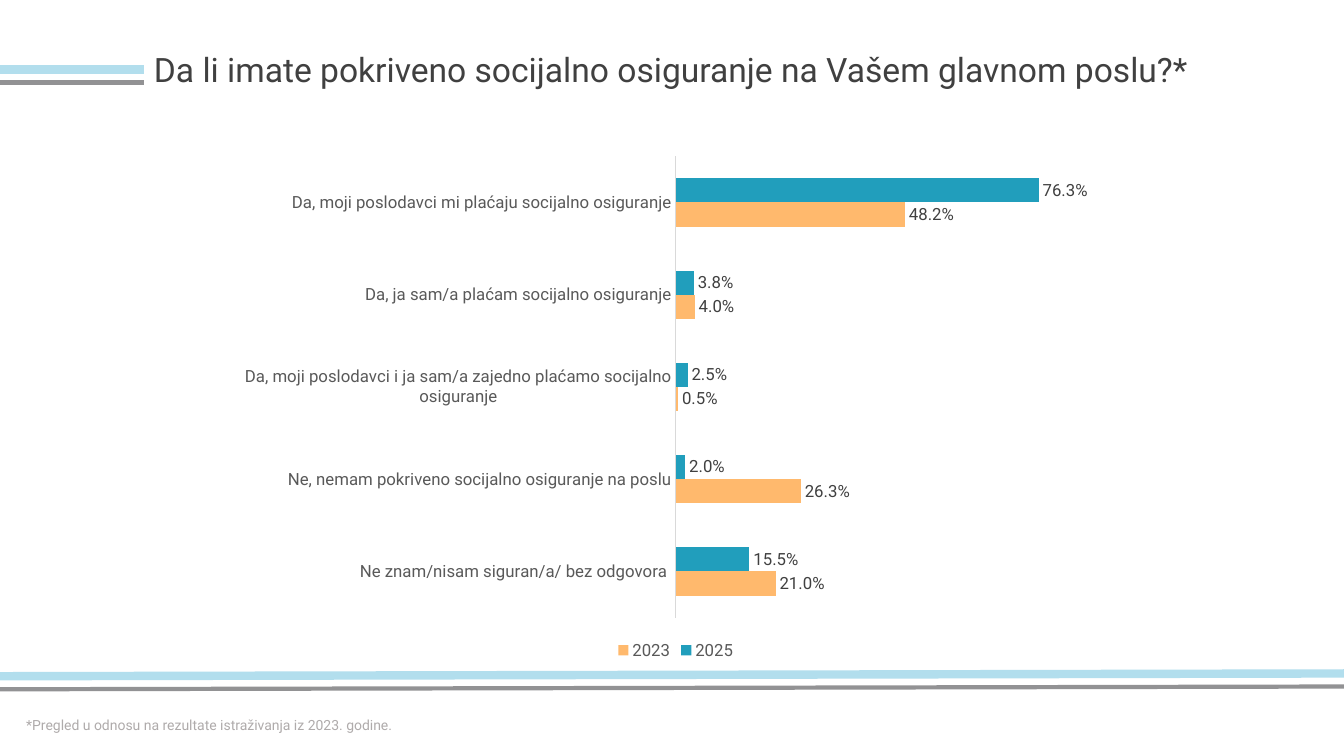
"""Build the slide on social insurance cover in 2023 and 2025."""
from dataclasses import dataclass

from lxml import etree
from pptx import Presentation
from pptx.chart.data import CategoryChartData
from pptx.dml.color import RGBColor
from pptx.enum.chart import (XL_CHART_TYPE, XL_LABEL_POSITION,
                             XL_LEGEND_POSITION, XL_TICK_MARK)
from pptx.enum.shapes import MSO_CONNECTOR
from pptx.oxml import parse_xml
from pptx.oxml.ns import nsdecls, qn
from pptx.util import Cm, Pt

BARS = XL_CHART_TYPE.BAR_CLUSTERED
OUTER = XL_LABEL_POSITION.OUTSIDE_END
BOTTOM = XL_LEGEND_POSITION.BOTTOM
NO_TICK = XL_TICK_MARK.NONE
STRAIGHT = MSO_CONNECTOR.STRAIGHT


@dataclass(frozen=True)
class Theme:
    font: str = "Roboto"
    dark: str = "404040"
    mid: str = "595959"
    pale: str = "AFABAB"
    axis: str = "D9D9D9"
    black: str = "000000"
    gray: str = "929294"
    sky: str = "B2DEED"
    teal: str = "219EBC"
    sand: str = "FFB96D"
    title: int = 24
    label: int = 12
    note: int = 10


THEME = Theme()
WIDE, HIGH = 33.87, 19.05
PERCENT = "0.0%"

TEXTS = [
    ("Da li imate pokriveno socijalno osiguranje na Vašem glavnom poslu?*",
     (3.63, 1.12, 27.18, 1.27), THEME.title, THEME.dark),
    ("*Pregled u odnosu na rezultate istraživanja iz 2023. godine.",
     (0.41, 17.93, 17.78, 0.69), THEME.note, THEME.pale),
]
PAIRS = [(WIDE, 17.04, 16.97), (3.63, 1.75, 1.75)]
STRIPES = [(0.33, THEME.gray, 3), (0, THEME.sky, 6)]
ANSWERS = [
    "Da, moji poslodavci mi plaćaju socijalno osiguranje",
    "Da, ja sam/a plaćam socijalno osiguranje",
    "Da, moji poslodavci i ja sam/a zajedno plaćamo socijalno osiguranje",
    "Ne, nemam pokriveno socijalno osiguranje na poslu",
    "Ne znam/nisam siguran/a/ bez odgovora ",
]
YEARS = [
    ("2025", (0.763, 0.038, 0.025, 0.02, 0.155), THEME.teal),
    ("2023", (0.482, 0.04, 0.005, 0.263, 0.21), THEME.sand),
]
CHART = (5.79, 3.68, 22.48, 13.06)
PLOT = {"x": 0.5, "y": 0.02, "w": 0.48, "h": 0.89}


def style(font, size, color):
    font.name = THEME.font
    font.size = Pt(size)
    font.color.rgb = RGBColor.from_string(color)


def add_text(slide, text, box, size, color):
    frame = slide.shapes.add_textbox(*map(Cm, box)).text_frame
    frame.word_wrap = True
    frame.text = text
    style(frame.paragraphs[0].runs[0].font, size, color)


def add_stripe(slide, right, start, end, color, width):
    line = slide.shapes.add_connector(
        STRAIGHT, Cm(0), Cm(start), Cm(right), Cm(end))
    line.line.color.rgb = RGBColor.from_string(color)
    line.line.width = Pt(width)
    etree.SubElement(line._element.spPr, qn("a:effectLst"))


def place_plot(chart):
    modes = '<c:xMode val="edge"/><c:yMode val="edge"/>'
    sizes = "".join(f'<c:{key} val="{val}"/>' for key, val in PLOT.items())
    area = chart._chartSpace.chart.plotArea
    for old in area.findall(qn("c:layout")):
        area.remove(old)
    area.insert(0, parse_xml(
        f'<c:layout {nsdecls("c")}><c:manualLayout>'
        f'<c:layoutTarget val="inner"/>{modes}{sizes}'
        '</c:manualLayout></c:layout>'))


def add_bars(slide):
    data = CategoryChartData(number_format=PERCENT)
    data.categories = ANSWERS
    for name, vals, _ in YEARS:
        data.add_series(name, vals)
    chart = slide.shapes.add_chart(BARS, *map(Cm, CHART), data).chart
    style(chart.font, THEME.label, THEME.black)
    chart.has_title = False
    chart.has_legend = True
    chart.legend.position = BOTTOM
    chart.legend.include_in_layout = False
    style(chart.legend.font, THEME.label, THEME.mid)

    cats = chart.category_axis
    cats.reverse_order = True
    cats.major_tick_mark = cats.minor_tick_mark = NO_TICK
    cats.has_major_gridlines = False
    cats.format.line.color.rgb = RGBColor.from_string(THEME.axis)
    cats.format.line.width = Pt(0.75)
    style(cats.tick_labels.font, THEME.label, THEME.mid)

    scale = chart.value_axis
    scale.visible = False
    scale.has_major_gridlines = False
    scale.minimum_scale, scale.maximum_scale = 0, 0.9
    scale.tick_labels.number_format = PERCENT
    scale.tick_labels.number_format_is_linked = False

    plot = chart.plots[0]
    plot.gap_width, plot.overlap = 182, 0
    plot.vary_by_categories = False
    for series, (_, _, color) in zip(plot.series, YEARS):
        series.format.fill.solid()
        series.format.fill.fore_color.rgb = RGBColor.from_string(color)
        labels = series.data_labels
        labels.show_value = True
        labels.position = OUTER
        labels.number_format = PERCENT
        labels.number_format_is_linked = False
        style(labels.font, THEME.label, THEME.dark)
    place_plot(chart)


def main():
    deck = Presentation()
    deck.slide_width, deck.slide_height = Cm(WIDE), Cm(HIGH)
    slide = deck.slides.add_slide(deck.slide_layouts[6])
    for right, start, end in PAIRS:
        for drop, color, width in STRIPES:
            add_stripe(slide, right, start + drop, end + drop, color, width)
    for item in TEXTS:
        add_text(slide, *item)
    add_bars(slide)
    deck.save("out.pptx")


if __name__ == "__main__":
    main()
